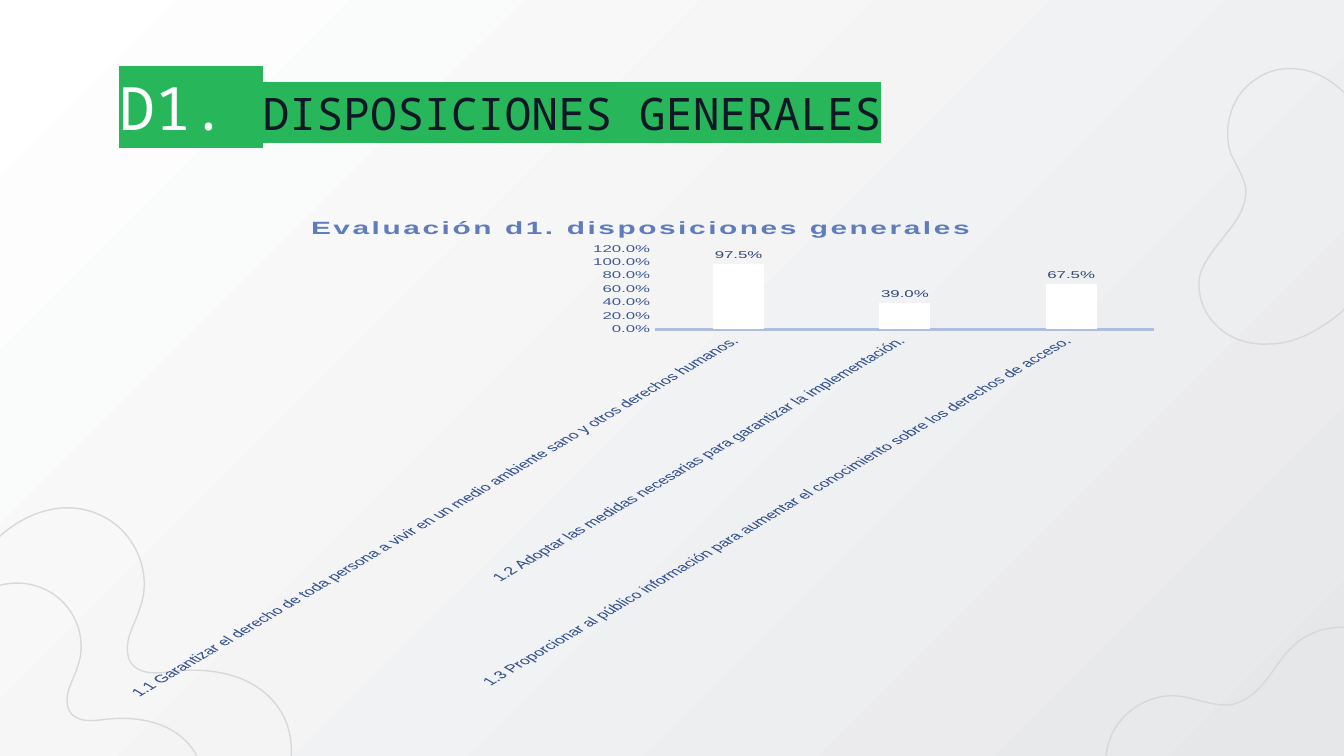
from pptx import Presentation
from pptx.chart.data import CategoryChartData
from pptx.dml.color import RGBColor
from pptx.enum.chart import XL_CHART_TYPE, XL_LABEL_POSITION, XL_TICK_MARK
from pptx.enum.dml import MSO_PATTERN
from pptx.oxml.ns import qn
from pptx.util import Cm, Pt
from lxml import etree

COLUMNS = XL_CHART_TYPE.COLUMN_CLUSTERED
OUTSIDE = XL_LABEL_POSITION.OUTSIDE_END
NO_TICK = XL_TICK_MARK.NONE
STRIPES = MSO_PATTERN.NARROW_VERTICAL

WHITE = RGBColor(0xFF, 0xFF, 0xFF)
MIST = RGBColor(0xE6, 0xE7, 0xE9)
OUTLINE = RGBColor(0xD8, 0xD8, 0xDA)
GREEN = RGBColor(0x28, 0xB6, 0x5A)
INK = RGBColor(0x10, 0x17, 0x26)
TITLE_BLUE = RGBColor(0x5F, 0x7D, 0xBD)
AXIS_BLUE = RGBColor(0x3F, 0x5B, 0x96)
AXIS_LINE = RGBColor(0xAF, 0xBE, 0xDD)
LABEL_BLUE = RGBColor(0x32, 0x48, 0x76)

TOP_RIGHT_WAVE = [
    (9.36, 0.58), (9.17, 0.69), (9.09, 0.94), (9.16, 1.15), (9.2, 1.23), (9.25, 1.31),
    (9.27, 1.4), (9.28, 1.52), (9.21, 1.64), (9.13, 1.73), (9.06, 1.83), (8.97, 1.92),
    (8.93, 2.04), (8.9, 2.18), (8.95, 2.33), (9.06, 2.43), (9.16, 2.53), (9.31, 2.57),
    (9.45, 2.56), (9.59, 2.56), (9.73, 2.5), (9.85, 2.42), (10.14, 2.24), (10.33, 1.91),
    (10.35, 1.56), (10.37, 1.34), (10.31, 1.12), (10.19, 0.92), (10.08, 0.75), (9.91, 0.56),
    (9.7, 0.52), (9.59, 0.5), (9.46, 0.51), (9.36, 0.58)]
BOTTOM_RIGHT_WAVE = [
    (8.26, 5.5), (8.33, 5.3), (8.55, 5.16), (8.76, 5.18), (8.9, 5.19), (9.04, 5.27),
    (9.18, 5.24), (9.29, 5.21), (9.37, 5.13), (9.43, 5.05), (9.5, 4.96), (9.55, 4.87),
    (9.63, 4.8), (9.76, 4.68), (9.96, 4.64), (10.12, 4.69), (10.29, 4.74), (10.43, 4.89),
    (10.47, 5.06), (10.53, 5.28), (10.42, 5.52), (10.26, 5.68), (10.09, 5.85), (9.87, 5.94),
    (9.65, 6.02), (9.28, 6.15), (8.55, 6.38), (8.31, 5.94), (8.23, 5.8), (8.2, 5.65),
    (8.26, 5.5)]
LEFT_WAVE = [
    (0.06, 3.94), (0.26, 3.79), (0.52, 3.72), (0.76, 3.84), (1.01, 3.96), (1.14, 4.27),
    (1.04, 4.53), (1.02, 4.6), (0.98, 4.67), (0.96, 4.74), (0.94, 4.82), (0.94, 4.91),
    (1, 4.96), (1.07, 5.02), (1.17, 5.01), (1.26, 5), (1.55, 4.96), (1.88, 5.01),
    (2.06, 5.25), (2.23, 5.47), (2.19, 5.81), (2.01, 6.03), (1.39, 6.77), (0.18, 6.2),
    (-0.23, 5.51), (-0.43, 5.16), (-0.43, 4.7), (-0.26, 4.34), (-0.19, 4.19), (-0.08, 4.05),
    (0.06, 3.94)]
INNER_SCALE = 5 / 6
INNER_LEFT_WAVE = [(-0.29 + INNER_SCALE * x, 1.19 + INNER_SCALE * y) for x, y in LEFT_WAVE]

EVALUATION = {
    "1.1 Garantizar el derecho de toda persona a vivir en un medio ambiente sano y otros derechos humanos. ": 0.975,
    "1.2 Adoptar las medidas necesarias para garantizar la implementación. ": 0.39,
    "1.3 Proporcionar al público información para aumentar el conocimiento sobre los derechos de acceso. ": 0.675,
}


def apply(target, values):
    for name, value in values.items():
        setattr(target, name, value)


class EvaluationSlide:
    """Draws the parts of an evaluation slide in one shared style."""

    heading_font = "Noto Sans Mono"
    chart_font = "Arial"

    def __init__(self, deck):
        self.slide = deck.slides.add_slide(deck.slide_layouts[6])

    def style(self, font, color, **values):
        apply(font, {"name": self.chart_font, "bold": False, **values})
        font.color.rgb = color

    def background(self, start, end):
        fill = self.slide.background.fill
        fill.gradient()
        fill.gradient_angle = 315
        for stop, color in zip(fill.gradient_stops, (start, end)):
            stop.color.rgb = color

    def wave(self, outline):
        start, *rest = [(Cm(2.54 * x), Cm(2.54 * y)) for x, y in outline]
        builder = self.slide.shapes.build_freeform(*start)
        builder.add_line_segments(rest, close=True)
        wave = builder.convert_to_shape()
        self.curve(wave)
        wave.shadow.inherit = False
        wave.fill.background()
        wave.line.color.rgb = OUTLINE
        wave.line.width = Pt(0.75)

    def curve(self, wave):
        segments = list(wave._element.iter(qn("a:lnTo")))
        for i in range(0, len(segments), 3):
            first, *others = segments[i:i + 3]
            first.tag = qn("a:cubicBezTo")
            for segment in others:
                first.append(segment[0])
                segment.getparent().remove(segment)

    def heading(self, parts, left, top, width, height):
        frame = self.slide.shapes.add_textbox(left, top, width, height).text_frame
        margins = ("margin_left", "margin_top", "margin_right", "margin_bottom")
        apply(frame, {"word_wrap": True, **dict.fromkeys(margins, Cm(0.25))})
        for text, size, color in parts:
            run = frame.paragraphs[0].add_run()
            run.text = text
            run.font.color.rgb = color
            highlight = etree.SubElement(run.font._element, qn("a:highlight"))
            etree.SubElement(highlight, qn("a:srgbClr"), val=str(GREEN))
            apply(run.font, {"size": Pt(size), "name": self.heading_font})

    def column_chart(self, title, values, left, top, width, height):
        data = CategoryChartData(number_format="0.0%")
        data.categories = list(values)
        data.add_series("Series 1", list(values.values()))
        chart = self.slide.shapes.add_chart(COLUMNS, left, top, width, height, data).chart
        apply(chart, {"has_legend": False, "has_title": True})
        self.style(chart.font, INK, size=Pt(10))

        chart.chart_title.text_frame.text = title
        title_run = chart.chart_title.text_frame.paragraphs[0].runs[0]
        self.style(title_run.font, TITLE_BLUE, size=Pt(16), bold=True)
        title_run.font._element.set("spc", "150")

        plot = chart.plots[0]
        apply(plot, {"gap_width": 227, "vary_by_categories": False, "has_data_labels": True})
        percent = {"number_format": "0.0%", "number_format_is_linked": False}
        apply(plot.data_labels, {**percent, "show_value": True, "position": OUTSIDE})
        self.style(plot.data_labels.font, LABEL_BLUE, size=Pt(9))
        column_fill = plot.series[0].format.fill
        column_fill.patterned()
        column_fill.pattern = STRIPES
        column_fill.fore_color.rgb = WHITE
        column_fill.back_color.rgb = WHITE

        criteria, scores = chart.category_axis, chart.value_axis
        for axis, size in ((criteria, 10), (scores, 9)):
            apply(axis, {"has_major_gridlines": False, "major_tick_mark": NO_TICK,
                         "minor_tick_mark": NO_TICK})
            self.style(axis.tick_labels.font, AXIS_BLUE, size=Pt(size))
        criteria.format.line.color.rgb = AXIS_LINE
        criteria.format.line.width = Pt(1.5)
        criteria._element.find(qn("c:txPr")).find(qn("a:bodyPr")).set("rot", "-2700000")
        apply(scores, {"minimum_scale": 0, "maximum_scale": 1.2, "major_unit": 0.2})
        apply(scores.tick_labels, percent)
        scores.format.line.fill.background()


def main():
    deck = Presentation()
    apply(deck, {"slide_width": Cm(25.4), "slide_height": Cm(14.29)})
    page = EvaluationSlide(deck)
    page.background(WHITE, MIST)
    for outline in (TOP_RIGHT_WAVE, BOTTOM_RIGHT_WAVE, LEFT_WAVE, INNER_LEFT_WAVE):
        page.wave(outline)
    page.heading([("D1.", 32, WHITE), (" ", 32, INK), ("DISPOSICIONES GENERALES", 24, INK)],
                 Cm(2), Cm(1.08), Cm(21.4), Cm(1.65))
    page.column_chart("Evaluación d1. disposiciones generales", EVALUATION,
                      Cm(2), Cm(3.84), Cm(20.22), Cm(9.37))
    deck.save("out.pptx")


if __name__ == "__main__":
    main()
